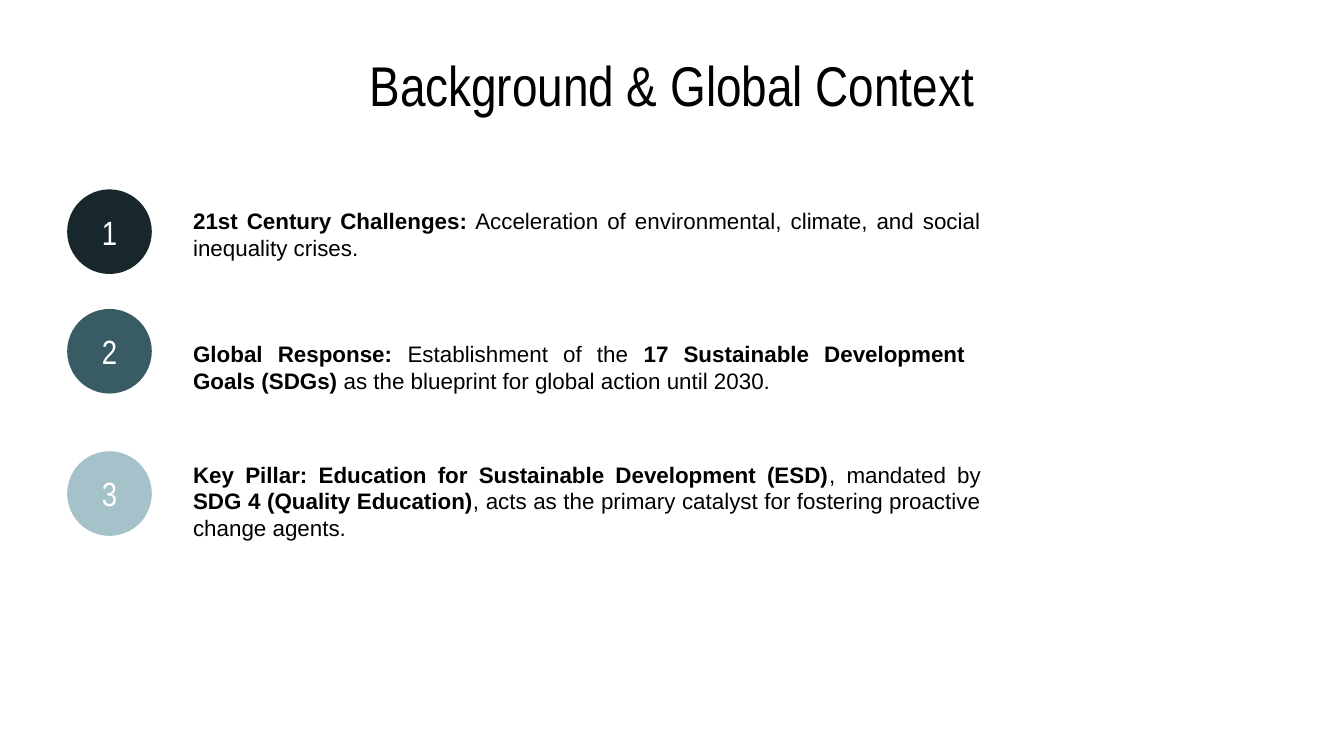
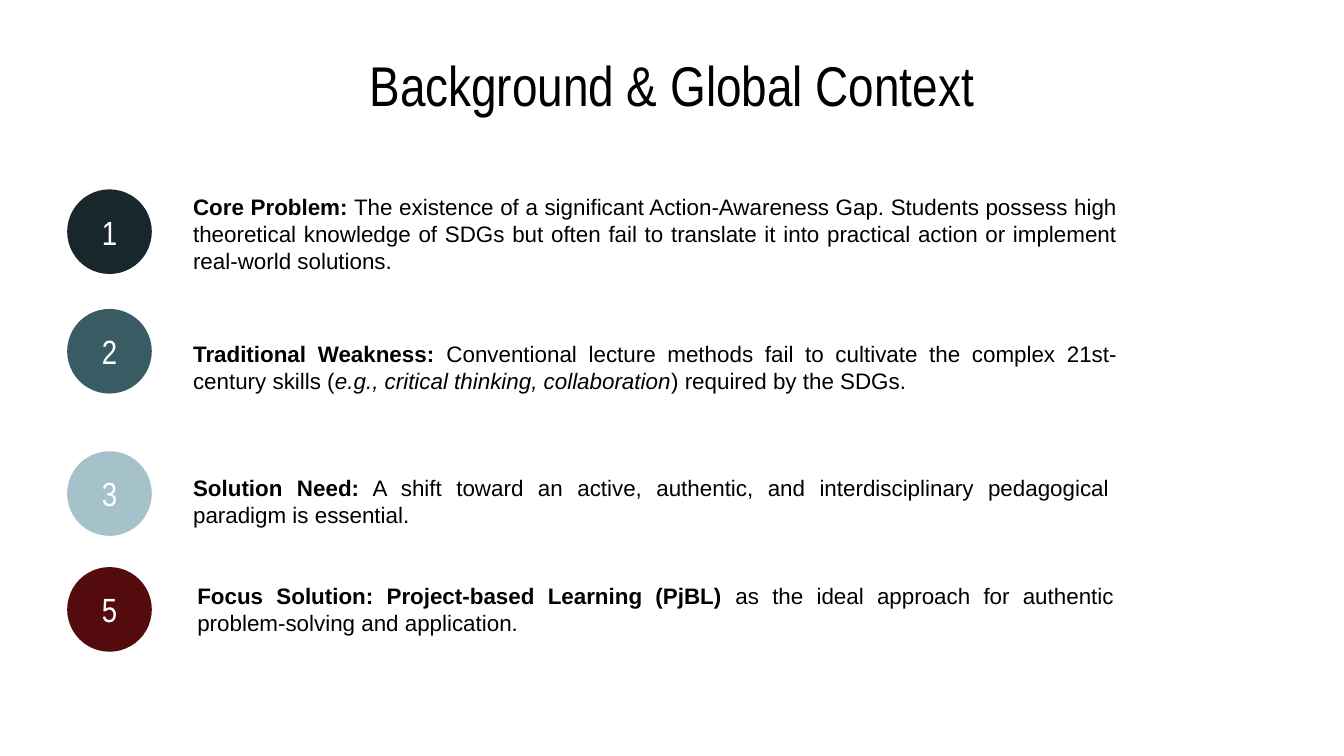
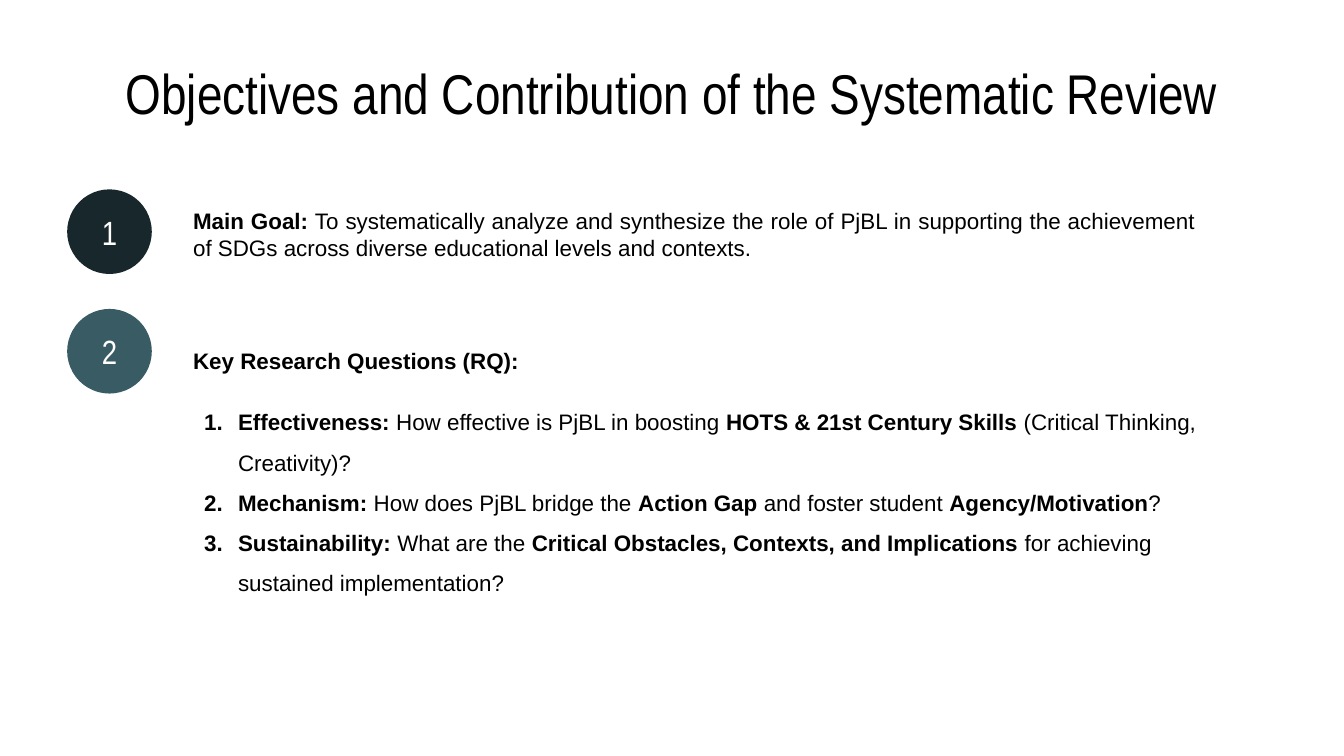
from lxml import etree
from pptx import Presentation
from pptx.dml.color import RGBColor
from pptx.enum.shapes import MSO_SHAPE
from pptx.enum.text import MSO_ANCHOR, PP_ALIGN
from pptx.oxml.ns import qn
from pptx.util import Cm, Pt

ELLIPSE = MSO_SHAPE.OVAL
TOP, MIDDLE = MSO_ANCHOR.TOP, MSO_ANCHOR.MIDDLE
LEFT, CENTER, JUSTIFY = PP_ALIGN.LEFT, PP_ALIGN.CENTER, PP_ALIGN.JUSTIFY

COLORS = {
    "text": "000000",
    "number": "FFFFFF",
    "ink": "17272B",
    "teal": "385B64",
    "mist": "A5C1C9",
    "wine": "540B0E",
}

# Text styles: font, size, colour
TITLE_STYLE = {"name": "Arial Narrow", "size": Pt(30), "color": "text"}
NUMBER_STYLE = {"name": "Arial Narrow", "size": Pt(18), "color": "number"}
BODY_STYLE = {"name": "Arial", "size": Pt(12), "color": "text"}
BOLD = {"bold": True}
ITALIC = {"italic": True}
PLAIN = {}

# Shared grid, in centimetres
MARGIN = 1.27
TITLE_TOP, TITLE_WIDTH, TITLE_HEIGHT = 0.71, 22.86, 1.6
CIRCLE_SIZE = 1.6
TEXT_LEFT = 3.4
INSET = 0.25
LIST_INDENT = 0.64

# One entry per row: circle top, circle colour, text top, text height
ROWS = [
    (3.58, "ink", 3.91, 1.02),
    (5.84, "teal", 6.43, 1.02),
    (8.53, "mist", 8.76, 1.42),
    (10.72, "wine", 10.8, 1.42),
]


def format_frame(shape, anchor):
    frame = shape.text_frame
    settings = {"word_wrap": True, "vertical_anchor": anchor}
    for side in ("left", "top", "right", "bottom"):
        settings[f"margin_{side}"] = Cm(INSET)
    for name, value in settings.items():
        setattr(frame, name, value)
    return frame


def add_runs(paragraph, runs, style, alignment):
    paragraph.alignment = alignment
    for text, emphasis in runs:
        run = paragraph.add_run()
        run.text = text
        for name, value in {**style, **emphasis}.items():
            if name == "color":
                run.font.color.rgb = RGBColor.from_string(COLORS[value])
            else:
                setattr(run.font, name, value)


def add_text(slide, box, runs, style, alignment, anchor=MIDDLE):
    shape = slide.shapes.add_textbox(*map(Cm, box))
    frame = format_frame(shape, anchor)
    add_runs(frame.paragraphs[0], runs, style, alignment)


def add_title(slide, text, top=TITLE_TOP):
    box = (MARGIN, top, TITLE_WIDTH, TITLE_HEIGHT)
    add_text(slide, box, [(text, PLAIN)], TITLE_STYLE, CENTER, TOP)


def add_circle(slide, top, color, label):
    shape = slide.shapes.add_shape(
        ELLIPSE, Cm(MARGIN), Cm(top), Cm(CIRCLE_SIZE), Cm(CIRCLE_SIZE))
    shape.shadow.inherit = False
    shape.fill.solid()
    shape.fill.fore_color.rgb = RGBColor.from_string(COLORS[color])
    shape.line.fill.background()
    frame = format_frame(shape, MIDDLE)
    add_runs(frame.paragraphs[0], [(label, PLAIN)], NUMBER_STYLE, CENTER)


def add_row(slide, row, label, width, runs, left=TEXT_LEFT, shift=0):
    """Numbered circle with its statement; shift moves the statement down."""
    circle_top, color, text_top, height = ROWS[row]
    box = (left, text_top + shift, width, height)
    add_text(slide, box, runs, BODY_STYLE, JUSTIFY)
    add_circle(slide, circle_top, color, label)


def add_numbered_list(slide, box, items):
    shape = slide.shapes.add_textbox(*map(Cm, box))
    frame = format_frame(shape, MIDDLE)
    for index, runs in enumerate(items):
        paragraph = frame.add_paragraph() if index else frame.paragraphs[0]
        add_runs(paragraph, runs, BODY_STYLE, LEFT)
        paragraph.line_spacing = 1.5
        properties = paragraph._p.get_or_add_pPr()
        properties.set("marL", str(Cm(LIST_INDENT)))
        properties.set("indent", str(-Cm(LIST_INDENT)))
        bullet_color = etree.SubElement(properties, qn("a:buClr"))
        etree.SubElement(bullet_color, qn("a:srgbClr"), val=COLORS["text"])
        etree.SubElement(properties, qn("a:buFont"), typeface=BODY_STYLE["name"])
        etree.SubElement(properties, qn("a:buAutoNum"), type="arabicPeriod")


def build_context(slide):
    add_title(slide, "Background & Global Context")
    add_row(slide, 0, "1", 15.39, [
        ("21st Century Challenges:", BOLD),
        (" Acceleration of environmental, climate, and social inequality crises.", PLAIN),
    ])
    add_row(slide, 1, "2", 15.09, [
        ("Global Response:", BOLD),
        (" Establishment of the ", PLAIN),
        ("17 Sustainable Development Goals (SDGs)", BOLD),
        (" as the blueprint for global action until 2030.", PLAIN),
    ])
    add_row(slide, 2, "3", 15.39, [
        ("Key Pillar: Education for Sustainable Development (ESD)", BOLD),
        (", mandated by ", PLAIN),
        ("SDG 4 (Quality Education)", BOLD),
        (", acts as the primary catalyst for fostering proactive change agents.", PLAIN),
    ])


def build_problem(slide):
    add_title(slide, "Background & Global Context")
    add_row(slide, 0, "1", 17.98, [
        ("Core Problem:", BOLD),
        (" The existence of a significant Action-Awareness Gap. Students possess "
         "high theoretical knowledge of SDGs but often fail to translate it into "
         "practical action or implement real-world solutions.", PLAIN),
    ])
    add_row(slide, 1, "2", 17.98, [
        ("Traditional Weakness:", BOLD),
        (" Conventional lecture methods fail to cultivate the complex "
         "21st-century skills (", PLAIN),
        ("e.g., critical thinking, collaboration", ITALIC),
        (") required by the SDGs.", PLAIN),
    ])
    add_row(slide, 2, "3", 17.83, [
        ("Solution Need:", BOLD),
        (" A shift toward an active, authentic, and interdisciplinary "
         "pedagogical paradigm is essential.", PLAIN),
    ])
    add_row(slide, 3, "5", 17.83, [
        ("Focus Solution: Project-based Learning (PjBL)", BOLD),
        (" as the ideal approach for authentic problem-solving and application.", PLAIN),
    ], left=3.48)


def build_objectives(slide):
    add_title(slide, "Objectives and Contribution of the Systematic Review", top=0.86)
    add_row(slide, 0, "1", 19.46, [
        ("Main Goal:", BOLD),
        (" To systematically analyze and synthesize the role of PjBL in supporting "
         "the achievement of SDGs across diverse educational levels and contexts.", PLAIN),
    ])
    add_row(slide, 1, "2", 19.25, [("Key Research Questions (RQ):", BOLD)], shift=-0.13)
    add_numbered_list(slide, (3.61, 8.66, 19.25, 1.42), [
        [("Effectiveness:", BOLD),
         (" How effective is PjBL in boosting ", PLAIN),
         ("HOTS & 21st Century Skills", BOLD),
         (" (Critical Thinking, Creativity)?", PLAIN)],
        [("Mechanism:", BOLD),
         (" How does PjBL bridge the ", PLAIN),
         ("Action Gap", BOLD),
         (" and foster student ", PLAIN),
         ("Agency/Motivation", BOLD),
         ("?", PLAIN)],
        [("Sustainability:", BOLD),
         (" What are the ", PLAIN),
         ("Critical Obstacles, Contexts, and Implications", BOLD),
         (" for achieving sustained implementation?", PLAIN)],
    ])


def main():
    presentation = Presentation()
    presentation.slide_width = Cm(25.4)
    presentation.slide_height = Cm(14.29)
    blank_layout = presentation.slide_layouts[6]
    for build in (build_context, build_problem, build_objectives):
        build(presentation.slides.add_slide(blank_layout))
    presentation.save("out.pptx")


if __name__ == "__main__":
    main()
